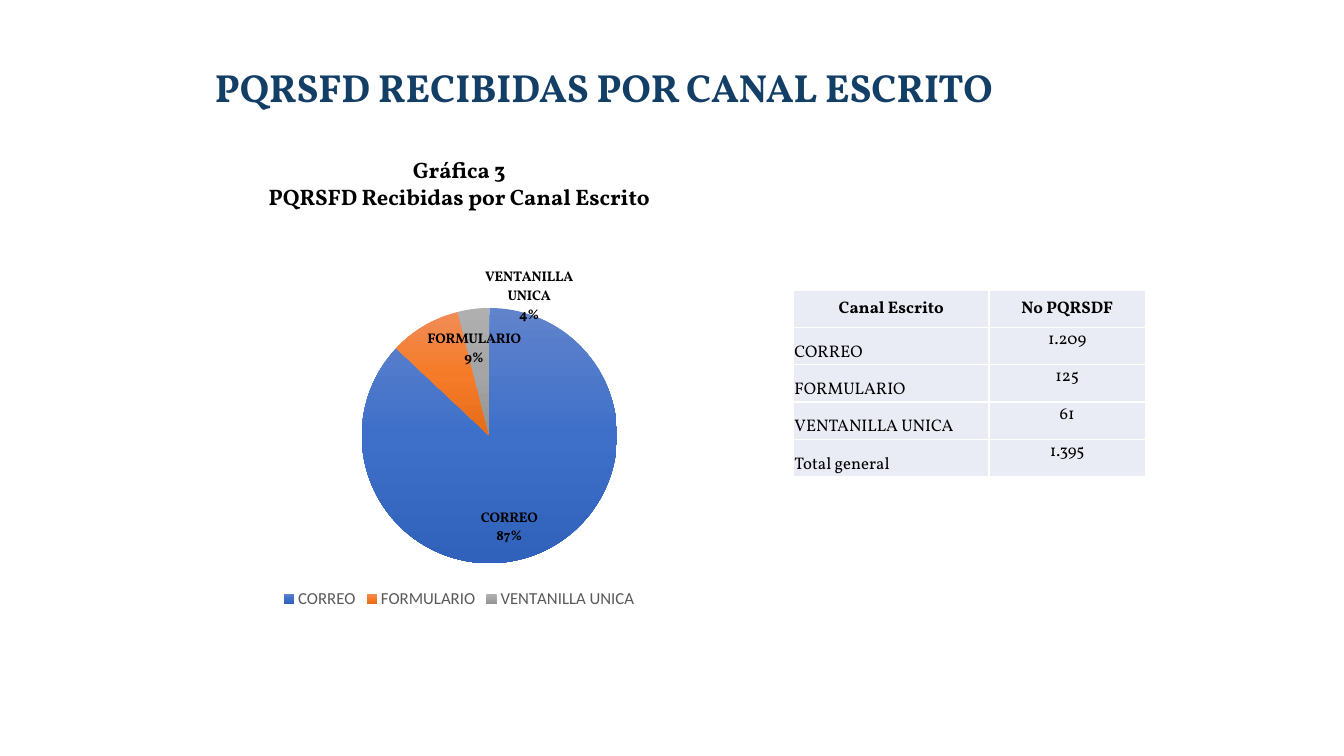
import copy
from dataclasses import dataclass

import lxml.etree
import pptx
import pptx.chart.data
import pptx.dml.color
import pptx.enum.chart
import pptx.enum.text
import pptx.oxml
import pptx.oxml.ns
import pptx.util

Inches = pptx.util.Inches
Align = pptx.enum.text.PP_ALIGN
Anchor = pptx.enum.text.MSO_ANCHOR
qn = pptx.oxml.ns.qn


@dataclass(frozen=True)
class Theme:
    serif: str = "Vollkorn"
    sans: str = "Calibri"
    title_color: str = "133E65"
    ink: str = "000000"
    muted: str = "595959"
    cell: str = "E9EBF5"
    border: str = "FFFFFF"
    slices: tuple = (
        ("6183CB", "3E70CA", "3062BB"),
        ("F18C57", "F67B28", "E56C19"),
        ("AFAFAF", "A5A5A5", "939393"),
    )
    title_size: int = 28
    caption_size: int = 16
    body_size: int = 12
    label_size: int = 10


def rgb(value):
    return pptx.dml.color.RGBColor.from_string(value)


def manual_layout(**settings):
    layout = lxml.etree.Element(qn("c:layout"))
    manual = lxml.etree.SubElement(layout, qn("c:manualLayout"))
    for tag, value in settings.items():
        lxml.etree.SubElement(manual, qn(f"c:{tag}")).set("val", str(value))
    return layout


class SlideBuilder:
    def __init__(self, presentation, theme):
        self.theme = theme
        self.slide = presentation.slides.add_slide(presentation.slide_layouts[5])

    def style(self, font, size, color, bold=False, name=None):
        font.name = name or self.theme.serif
        font.size = pptx.util.Pt(size)
        font.bold = bold
        font.color.rgb = rgb(color)

    def fill_text(self, frame, text, size, color, bold, align):
        frame.text = text
        for paragraph in frame.paragraphs:
            paragraph.alignment = align
            for run in paragraph.runs:
                self.style(run.font, size, color, bold)

    def title(self, text, left, top, width, height):
        heading = self.slide.shapes.title
        heading.left, heading.top = Inches(left), Inches(top)
        heading.width, heading.height = Inches(width), Inches(height)
        frame = heading.text_frame
        frame.vertical_anchor = Anchor.MIDDLE
        self.fill_text(frame, text, self.theme.title_size, self.theme.title_color, True, Align.LEFT)
        frame.paragraphs[0].line_spacing = 0.9

    def caption(self, text, left, top, width, height):
        frame = self.slide.shapes.add_textbox(
            Inches(left), Inches(top), Inches(width), Inches(height)).text_frame
        frame.word_wrap = True
        frame.auto_size = pptx.enum.text.MSO_AUTO_SIZE.SHAPE_TO_FIT_TEXT
        self.fill_text(frame, text, self.theme.caption_size, self.theme.ink, True, Align.CENTER)

    def table(self, rows, left, top, widths, row_height):
        table = self.slide.shapes.add_table(
            len(rows), len(widths), Inches(left), Inches(top),
            Inches(sum(widths)), Inches(row_height * len(rows))).table
        table.first_row = table.horz_banding = False
        for column, width in zip(table.columns, widths):
            column.width = Inches(width)
        for r, values in enumerate(rows):
            table.rows[r].height = Inches(row_height)
            for c, value in enumerate(values):
                header = r == 0
                align = Align.CENTER if header or c else Align.LEFT
                anchor = Anchor.MIDDLE if header else Anchor.TOP if c else Anchor.BOTTOM
                self.cell(table.cell(r, c), value, header, align, anchor)

    def cell(self, cell, value, bold, align, anchor):
        cell.margin_left = cell.margin_right = cell.margin_top = Inches(0.01)
        cell.margin_bottom = 0
        cell.vertical_anchor = anchor
        self.fill_text(cell.text_frame, value, self.theme.body_size, self.theme.ink, bold, align)
        properties = cell._tc.get_or_add_tcPr()
        for side in ("lnL", "lnR", "lnT", "lnB"):
            line = lxml.etree.SubElement(properties, qn(f"a:{side}"), w="12700")
            solid = lxml.etree.SubElement(line, qn("a:solidFill"))
            lxml.etree.SubElement(solid, qn("a:srgbClr"), val=self.theme.border)
        cell.fill.solid()
        cell.fill.fore_color.rgb = rgb(self.theme.cell)

    def pie(self, shares, nudges, left, top, width, height):
        data = pptx.chart.data.CategoryChartData()
        data.categories = list(shares)
        data.add_series("Series 1", list(shares.values()))
        chart = self.slide.shapes.add_chart(
            pptx.enum.chart.XL_CHART_TYPE.PIE, Inches(left), Inches(top),
            Inches(width), Inches(height), data).chart
        chart.has_title = False
        self.style(chart.font, self.theme.label_size, self.theme.ink, name=self.theme.sans)
        chart.has_legend = True
        chart.legend.position = pptx.enum.chart.XL_LEGEND_POSITION.BOTTOM
        chart.legend.include_in_layout = False
        self.style(chart.legend.font, self.theme.body_size, self.theme.muted, name=self.theme.sans)

        area = chart.element.find(".//" + qn("c:plotArea"))
        for automatic in area.findall(qn("c:layout")):
            area.remove(automatic)
        area.insert(0, manual_layout(layoutTarget="inner", xMode="edge", yMode="edge",
                                     x=0.32, y=0.2, w=0.47, h=0.67))

        chart.plots[0].vary_by_categories = True
        series = chart.plots[0].series[0]
        self.slice_labels(series.data_labels)
        for index, (category, colors) in enumerate(zip(shares, self.theme.slices)):
            self.slice_fill(chart, series.points[index].format.fill, colors)
            if category in nudges:
                self.nudge_label(chart, series.points[index].data_label, nudges[category])

    def slice_labels(self, labels):
        labels.show_percentage = labels.show_category_name = True
        labels.show_value = False
        labels.position = pptx.enum.chart.XL_LABEL_POSITION.INSIDE_END
        self.style(labels.font, self.theme.label_size, self.theme.ink, True)

    def slice_fill(self, chart, fill, colors):
        fill.gradient()
        fill.gradient_angle = 270
        stops = chart.element.findall(".//" + qn("a:gsLst"))[-1]
        stops.append(copy.deepcopy(stops[-1]))
        for stop, position, color in zip(fill.gradient_stops, (0, 0.5, 1), colors):
            stop.position = position
            stop.color.rgb = rgb(color)

    def nudge_label(self, chart, label, offset):
        label.position = pptx.enum.chart.XL_LABEL_POSITION.INSIDE_END
        self.style(label.font, self.theme.label_size, self.theme.ink, True)
        element = chart.element.findall(".//" + qn("c:dLbl"))[-1]
        for tag, shown in (("showVal", "0"), ("showCatName", "1"), ("showPercent", "1")):
            element.find(qn(f"c:{tag}")).set("val", shown)
        element.insert(1, manual_layout(x=offset[0], y=offset[1]))


def main():
    presentation = pptx.Presentation()
    presentation.slide_width, presentation.slide_height = Inches(13.33), Inches(7.5)
    builder = SlideBuilder(presentation, Theme())
    builder.title("PQRSFD RECIBIDAS POR CANAL ESCRITO", 2.03, 0.17, 10.25, 1.45)
    builder.table(
        [("Canal Escrito", "No PQRSDF"), ("CORREO", "1.209"), ("FORMULARIO", "125"),
         ("VENTANILLA UNICA", "61"), ("Total general", "1.395")],
        7.87, 2.88, (1.94, 1.55), 0.37)
    builder.pie({"CORREO": 87, "FORMULARIO": 9, "VENTANILLA UNICA": 4},
                {"VENTANILLA UNICA": (0.02, -0.12)}, 1.83, 2.3, 5.45, 3.78)
    builder.caption("Gráfica 3\nPQRSFD Recibidas por Canal Escrito", 1.22, 1.5, 6.67, 0.64)
    presentation.save("out.pptx")


if __name__ == "__main__":
    main()
